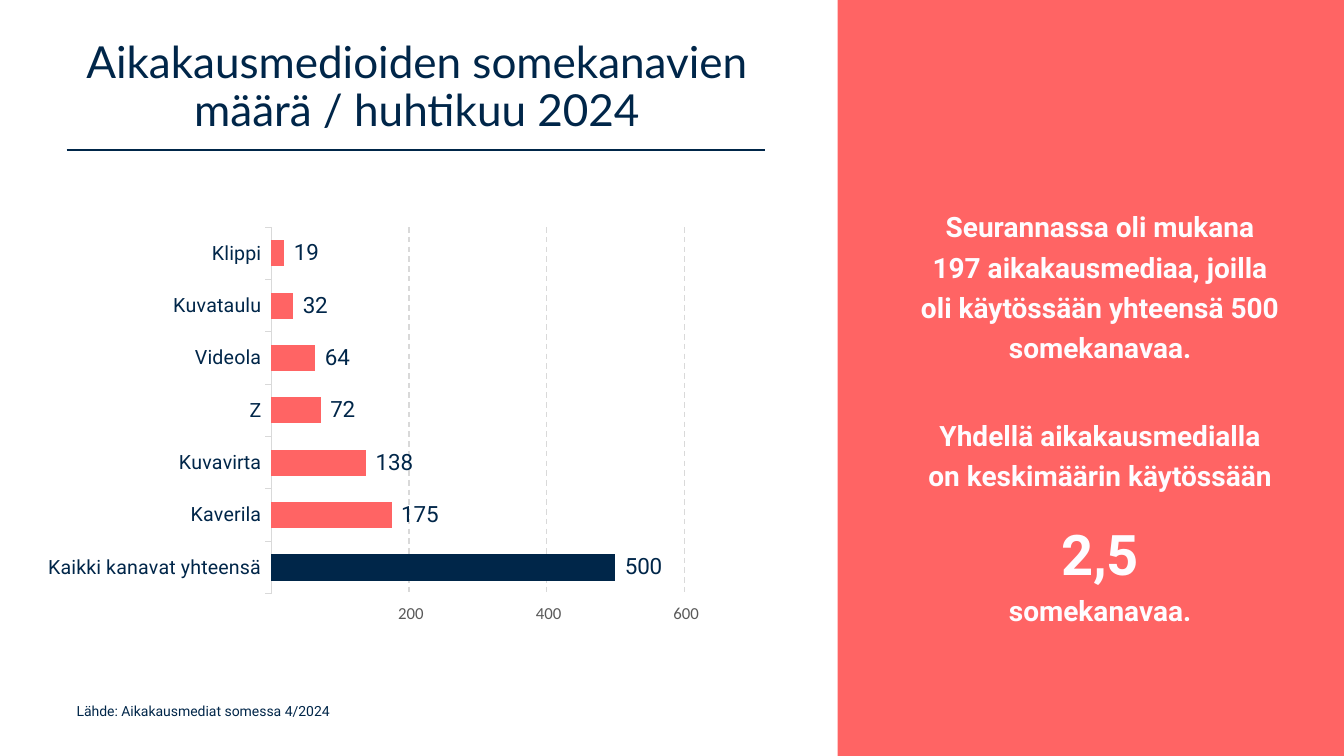
"""Builds a slide on the number of social media channels of magazines."""
from lxml.etree import SubElement
from pptx import Presentation
from pptx.chart.data import CategoryChartData
from pptx.dml.color import RGBColor
from pptx.enum.chart import XL_CHART_TYPE, XL_LABEL_POSITION, XL_TICK_MARK
from pptx.enum.dml import MSO_LINE
from pptx.enum.shapes import MSO_CONNECTOR, MSO_SHAPE
from pptx.enum.text import MSO_ANCHOR, PP_ALIGN
from pptx.oxml import parse_xml
from pptx.oxml.ns import nsdecls, qn
from pptx.util import Cm, Pt

NAVY, CORAL, WHITE = "002649", "FF6464", "FEFCFF"
GREY, DARK_GREY = "D9D9D9", "595959"
NUMBER_FORMAT = r"#\ ##0;\-#\ ##0;;@"

TITLE = "Aikakausmedioiden somekanavien määrä / huhtikuu 2024"
SOURCE = "Lähde: Aikakausmediat somessa 4/2024"
CHANNELS = [
    ("Kaikki kanavat yhteensä", 500),
    ("Kaverila", 175),
    ("Kuvavirta", 138),
    ("Z", 72),
    ("Videola", 64),
    ("Kuvataulu", 32),
    ("Klippi", 19),
]
# text, size, space before
FINDINGS = [
    ("Seurannassa oli mukana 197 aikakausmediaa, joilla oli käytössään yhteensä 500 somekanavaa.", 20, 0),
    ("Yhdellä aikakausmedialla on keskimäärin käytössään", 20, 34),
    ("2,5", 40, 10),
    ("somekanavaa.", 20, 0),
]
PLOT = {"x": 0.324, "y": 0.086, "w": 0.493, "h": 0.838}
SLIDE_W, SLIDE_H, PANEL_X = 33.87, 19.05, 21.11


def rgb(value):
    return RGBColor.from_string(value)


def set_font(font, size, color, name="Roboto", bold=False):
    font.size, font.name, font.bold = Pt(size), name, bold
    font.color.rgb = rgb(color)


def add_text(s, box, paragraphs, color, bold=False, align=None, spacing=None):
    tf = s.shapes.add_textbox(*map(Cm, box)).text_frame
    tf.word_wrap = True
    for i, (text, size, before) in enumerate(paragraphs):
        p = tf.add_paragraph() if i else tf.paragraphs[0]
        p.text, p.alignment, p.line_spacing = text, align, spacing
        p.space_before = Pt(before)
        set_font(p.font, size, color, bold=bold)
    return tf


def add_background(s):
    panel = s.shapes.add_shape(MSO_SHAPE.RECTANGLE, Cm(PANEL_X), 0, Cm(SLIDE_W - PANEL_X), Cm(SLIDE_H))
    panel.shadow.inherit = False
    panel.fill.solid()
    panel.fill.fore_color.rgb = rgb(CORAL)
    panel.line.fill.background()
    rule = s.shapes.add_connector(MSO_CONNECTOR.STRAIGHT, Cm(1.68), Cm(3.78), Cm(19.28), Cm(3.78))
    rule.line.color.rgb = rgb(NAVY)
    rule.line.width = Pt(1)
    SubElement(rule.element.spPr, qn("a:effectLst"))


def format_title(sp):
    sp.left, sp.top, sp.width, sp.height = map(Cm, (1.68, 0.64, 17.65, 3.18))
    tf = sp.text_frame
    tf.text, tf.word_wrap, tf.vertical_anchor = TITLE, True, MSO_ANCHOR.MIDDLE
    p = tf.paragraphs[0]
    p.alignment, p.line_spacing = PP_ALIGN.CENTER, 0.9
    set_font(p.font, 31.5, NAVY, "Lato")


def place_plot(chart):
    area = chart.element.find(f".//{qn('c:plotArea')}")
    for old in area.findall(qn("c:layout")):
        area.remove(old)
    sizes = "".join(f'<c:{k} val="{v}"/>' for k, v in PLOT.items())
    area.insert(0, parse_xml(
        f'<c:layout {nsdecls("c")}><c:manualLayout><c:layoutTarget val="inner"/>'
        f'<c:xMode val="edge"/><c:yMode val="edge"/>{sizes}</c:manualLayout></c:layout>'))


def add_channel_chart(s):
    data = CategoryChartData()
    data.categories = [name for name, _ in CHANNELS]
    data.add_series("Series 1", [count for _, count in CHANNELS])
    chart = s.shapes.add_chart(XL_CHART_TYPE.BAR_CLUSTERED, 0, Cm(4.78), Cm(PANEL_X), Cm(11.02), data).chart
    chart.has_legend = chart.has_title = False
    set_font(chart.font, 10, "000000", "Calibri")
    place_plot(chart)

    cat, val = chart.category_axis, chart.value_axis
    cat.major_tick_mark = val.major_tick_mark = XL_TICK_MARK.OUTSIDE
    cat.has_major_gridlines = False
    set_font(cat.tick_labels.font, 14, NAVY)
    cat.format.line.color.rgb = rgb(GREY)
    cat.format.line.width = Pt(0.75)

    val.minimum_scale, val.maximum_scale, val.major_unit = 0, 600, 200
    set_font(val.tick_labels.font, 12, DARK_GREY, "Calibri")
    val.format.line.fill.background()
    grid = val.major_gridlines.format.line
    grid.color.rgb, grid.width, grid.dash_style = rgb(GREY), Pt(1), MSO_LINE.DASH

    plot = chart.plots[0]
    plot.gap_width, plot.vary_by_categories = 100, False
    series = plot.series[0]
    for part, color in ((series, CORAL), (series.points[0], NAVY)):
        part.format.fill.solid()
        part.format.fill.fore_color.rgb = rgb(color)
    labels = series.data_labels
    labels.show_value, labels.position = True, XL_LABEL_POSITION.OUTSIDE_END
    set_font(labels.font, 16, NAVY)
    for numbers in (val.tick_labels, labels):
        numbers.number_format, numbers.number_format_is_linked = NUMBER_FORMAT, False


def main():
    prs = Presentation()
    prs.slide_width, prs.slide_height = Cm(SLIDE_W), Cm(SLIDE_H)
    s = prs.slides.add_slide(prs.slide_layouts[5])
    add_background(s)
    format_title(s.shapes.title)
    add_text(s, (1.68, 17.58, 16.71, 1.12), [(SOURCE, 10, 0)], NAVY)
    tf = add_text(s, (22.96, 3.99, 9.53, 12.95), FINDINGS, WHITE, True, PP_ALIGN.CENTER, 1.2)
    tf.vertical_anchor = MSO_ANCHOR.MIDDLE
    add_channel_chart(s)
    prs.save("out.pptx")


if __name__ == "__main__":
    main()
